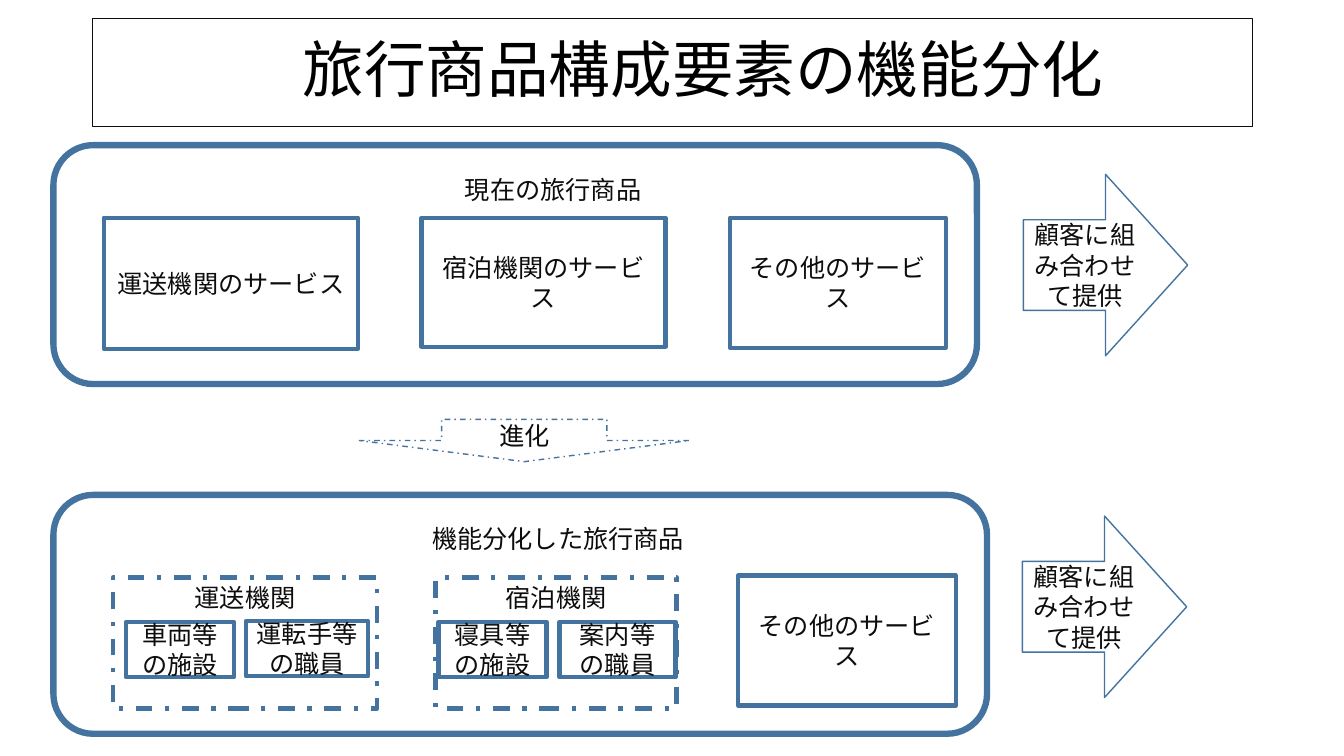
from dataclasses import dataclass

from pptx import Presentation
from pptx.dml.color import RGBColor
from pptx.enum.dml import MSO_LINE
from pptx.enum.shapes import MSO_SHAPE
from pptx.enum.text import MSO_ANCHOR, PP_ALIGN
from pptx.slide import Slide
from pptx.util import Emu, Pt

EMU_PER_PX = 9144
COLORS = {"outline": "43739E", "text": "0D0D0D", "title": "000000"}


def px(length: int) -> Emu:
    return Emu(length * EMU_PER_PX)


@dataclass(frozen=True)
class Style:
    preset: MSO_SHAPE
    line_width: float
    line_color: str = "outline"
    text_color: str = "text"
    dash: MSO_LINE | None = None
    size: int = 18
    line_spacing: float = 1.0
    anchor: MSO_ANCHOR = MSO_ANCHOR.MIDDLE
    margin_top: int = 5
    margin_left: int = 10


@dataclass(frozen=True)
class Block:
    text: str
    left: int
    top: int
    width: int
    height: int
    style: Style


TITLE = Style(MSO_SHAPE.RECTANGLE, 0.75, "text", "title", size=44,
              line_spacing=0.9, margin_left=71)
PANEL = Style(MSO_SHAPE.ROUNDED_RECTANGLE, 4.5, anchor=MSO_ANCHOR.TOP,
              margin_top=17, margin_left=85)
SERVICE = Style(MSO_SHAPE.RECTANGLE, 3)
GROUP = Style(MSO_SHAPE.RECTANGLE, 3, dash=MSO_LINE.DASH_DOT,
              anchor=MSO_ANCHOR.TOP)
EVOLUTION = Style(MSO_SHAPE.DOWN_ARROW, 1, dash=MSO_LINE.DASH_DOT)
DELIVERY = Style(MSO_SHAPE.RIGHT_ARROW, 1)

BLOCKS = [
    Block("旅行商品構成要素の機能分化", 92, 18, 1150, 108, TITLE),
    Block("現在の旅行商品", 53, 144, 916, 237, PANEL),
    Block("機能分化した旅行商品", 53, 491, 926, 237, PANEL),
    Block("進化", 356, 416, 328, 42, EVOLUTION),
    Block("運送機関のサービス", 103, 216, 252, 130, SERVICE),
    Block("宿泊機関のサービス", 418, 216, 242, 128, SERVICE),
    Block("その他のサービス", 724, 216, 214, 129, SERVICE),
    Block("運送機関", 112, 573, 262, 130, GROUP),
    Block("車両等の施設", 125, 617, 107, 55, SERVICE),
    Block("運転手等の職員", 244, 616, 121, 55, SERVICE),
    Block("宿泊機関", 432, 573, 239, 130, GROUP),
    Block("寝具等の施設", 435, 617, 107, 55, SERVICE),
    Block("案内等の職員", 555, 617, 115, 55, SERVICE),
    Block("その他のサービス", 732, 571, 216, 129, SERVICE),
    Block("顧客に組み合わせて提供", 1015, 173, 163, 180, DELIVERY),
    Block("顧客に組み合わせて提供", 1014, 512, 163, 180, DELIVERY),
]


def apply_format(target: object, values: dict[str, object]) -> None:
    for name, value in values.items():
        setattr(target, name, value)


def draw_block(slide: Slide, block: Block) -> None:
    style = block.style
    shape = slide.shapes.add_shape(
        style.preset, px(block.left), px(block.top), px(block.width), px(block.height))
    shape.shadow.inherit = False
    shape.fill.background()
    shape.line.color.rgb = RGBColor.from_string(COLORS[style.line_color])
    apply_format(shape.line, {"width": Pt(style.line_width), "dash_style": style.dash})

    frame = shape.text_frame
    apply_format(frame, {
        "word_wrap": True,
        "vertical_anchor": style.anchor,
        "margin_top": px(style.margin_top),
        "margin_left": px(style.margin_left),
    })
    paragraph = frame.paragraphs[0]
    apply_format(paragraph, {"alignment": PP_ALIGN.CENTER,
                             "line_spacing": style.line_spacing})
    label = paragraph.add_run()
    label.text = block.text
    apply_format(label.font, {"name": "Calibri", "size": Pt(style.size)})
    label.font.color.rgb = RGBColor.from_string(COLORS[style.text_color])


def main() -> None:
    deck = Presentation()
    apply_format(deck, {"slide_width": px(1333), "slide_height": px(750)})
    slide = deck.slides.add_slide(deck.slide_layouts[6])
    for block in BLOCKS:
        draw_block(slide, block)
    deck.save("out.pptx")


if __name__ == "__main__":
    main()
